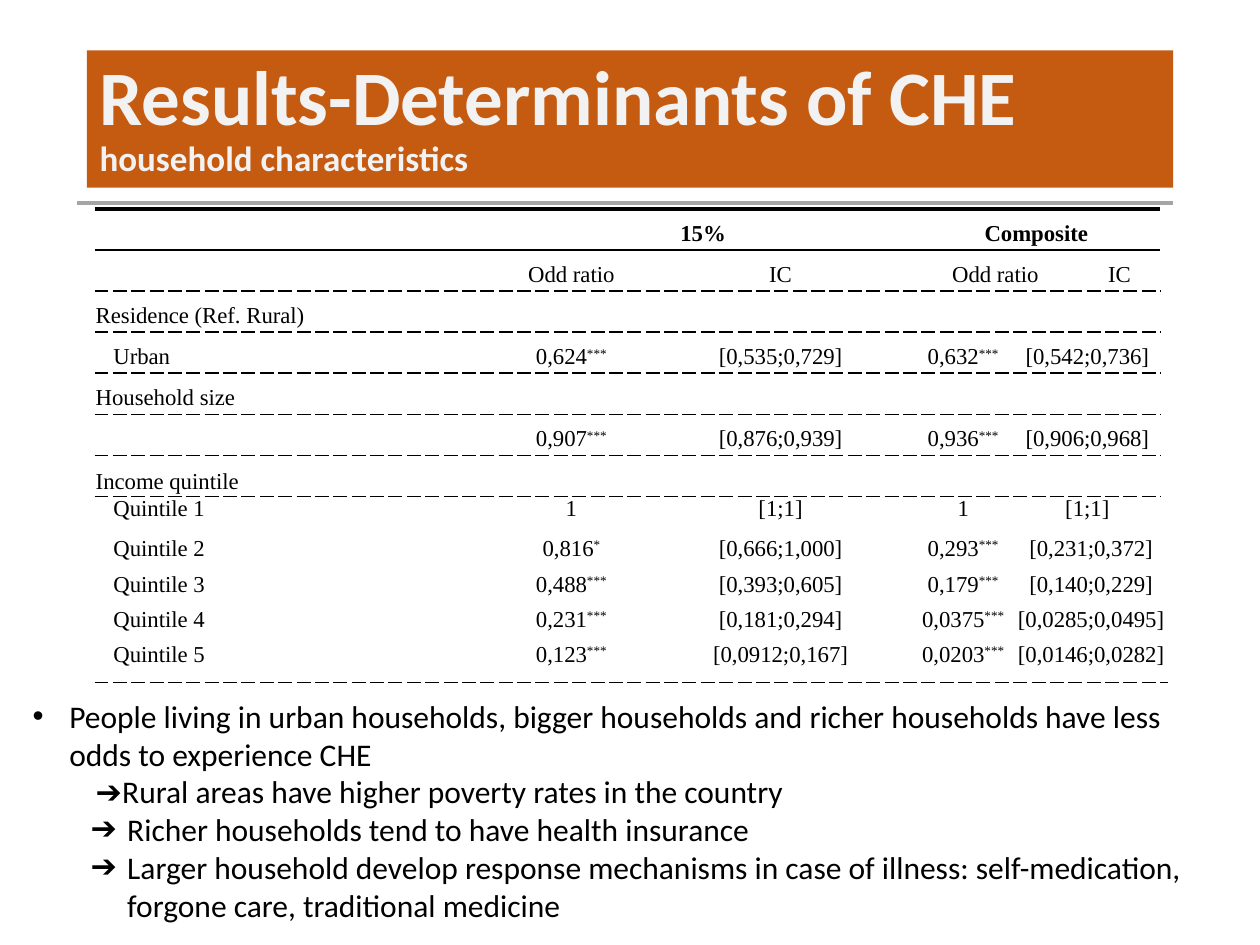
import pptx
import pptx.dml.color
import pptx.enum.dml
import pptx.enum.shapes
import pptx.enum.text
import pptx.oxml
import pptx.oxml.ns
import pptx.util
from pptx.util import Inches

COLORS = {"banner": "C55A11", "banner_text": "F2F2F2", "rule": "A5A5A5", "text": "000000"}
NO_GRID_STYLE = "{2D5ABB26-0587-4C30-8999-92F81FD0307C}"
ALIGN = pptx.enum.text.PP_ALIGN

COLUMN_WIDTHS = [3.17, 1.23, 2.09, 0.81, 0.51, 0.65, 0.05]
ROW_HEIGHTS = [0.28] * 6 + [0.32] * 2 + [0.28] * 3 + [0.32]

# Each row: label, 15% odds ratio, interval, composite odds ratio, interval, last column
ROWS = [
    ["", "15%", "", "Composite"],
    ["", "Odd ratio", "IC", "Odd ratio", "", "IC"],
    ["Residence (Ref. Rural)"],
    ["Urban", "0,624***", "[0,535;0,729]", "0,632***", "[0,542;0,736]"],
    ["Household size"],
    ["", "0,907***", "[0,876;0,939]", "0,936***", "[0,906;0,968]"],
    ["Income quintile"],
    ["Quintile 1", "1", "[1;1]", "1", "[1;1]"],
    ["Quintile 2", "0,816*", "[0,666;1,000]", "0,293***", "[0,231;0,372]"],
    ["Quintile 3", "0,488***", "[0,393;0,605]", "0,179***", "[0,140;0,229]"],
    ["Quintile 4", "0,231***", "[0,181;0,294]", "0,0375***", "[0,0285;0,0495]"],
    ["Quintile 5", "0,123***", "[0,0912;0,167]", "0,0203***", "[0,0146;0,0282]"],
]
# Merged cells: row -> (first column, last column)
SPANS = {0: [(1, 2), (3, 5)], 1: [(3, 4)], 2: [(0, 5)]}
SPANS.update({row: [(4, 5)] for row in range(3, 8)})
SPANS.update({row: [(4, 6)] for row in range(8, 12)})

# Text, level, left margin, first-line indent, bullet
FINDINGS = [
    ("People living in urban households, bigger households and richer households "
     "have less odds to experience CHE", 0, 0.29, -0.29, "•"),
    ("➔Rural areas have higher poverty rates in the country", 1, 0.5, 0, None),
    ("Richer households tend to have health insurance", 1, 0.75, -0.29, "➔"),
    ("Larger household develop response mechanisms in case of illness: "
     "self-medication, forgone care, traditional medicine", 1, 0.75, -0.29, "➔"),
]


def element(xml):
    namespace = pptx.oxml.ns.nsdecls("a")
    return pptx.oxml.parse_xml(xml.replace("/>", f" {namespace}/>", 1)
                               if xml.endswith("/>") and xml.count("<") == 1
                               else xml.replace(">", f" {namespace}>", 1))


class SlideBuilder:
    heading_font = "Calibri"
    table_font = "Times New Roman"
    table_size = 13

    def __init__(self, slide):
        self.slide = slide

    def color(self, name):
        return pptx.dml.color.RGBColor.from_string(COLORS[name])

    def style_run(self, run, font, size, color="text", bold=False):
        run.font.name = font
        run.font.size = pptx.util.Pt(size)
        run.font.bold = bold
        run.font.color.rgb = self.color(color)

    def place(self, shape, left, top, width, height):
        shape.left, shape.top = Inches(left), Inches(top)
        shape.width, shape.height = Inches(width), Inches(height)

    def rule(self, left, right, y):
        line = self.slide.shapes.add_connector(
            pptx.enum.shapes.MSO_CONNECTOR.STRAIGHT,
            Inches(left), Inches(y), Inches(right), Inches(y))
        line.line.color.rgb = self.color("rule")
        line.line.width = pptx.util.Pt(2.25)
        line._element.spPr.append(element("<a:effectLst/>"))

    def title(self, heading, subheading, box):
        shape = self.slide.shapes.title
        self.place(shape, *box)
        shape.fill.solid()
        shape.fill.fore_color.rgb = self.color("banner")
        frame = shape.text_frame
        frame.text = heading + "\v" + subheading
        frame.vertical_anchor = pptx.enum.text.MSO_ANCHOR.MIDDLE
        frame.auto_size = pptx.enum.text.MSO_AUTO_SIZE.NONE
        paragraph = frame.paragraphs[0]
        paragraph.alignment = ALIGN.LEFT
        paragraph.line_spacing = 0.9
        for run, size in zip(paragraph.runs, (44, 20)):
            self.style_run(run, self.heading_font, size, "banner_text", True)

    def bullets(self, items, box):
        shape = self.slide.placeholders[1]
        self.place(shape, *box)
        frame = shape.text_frame
        frame.text = "\n".join(item[0] for item in items)
        frame.auto_size = pptx.enum.text.MSO_AUTO_SIZE.SHAPE_TO_FIT_TEXT
        for paragraph, (_, level, margin, indent, bullet) in zip(frame.paragraphs, items):
            paragraph.level = level
            paragraph.space_before = pptx.util.Pt(0)
            properties = paragraph._p.get_or_add_pPr()
            properties.set("marL", str(Inches(margin)))
            properties.set("indent", str(Inches(indent)))
            properties.append(element(f'<a:buChar char="{bullet}"/>' if bullet else "<a:buNone/>"))
            self.style_run(paragraph.runs[0], self.heading_font, 18)

    def cell(self, cell, text, row, column):
        cell.fill.background()
        cell.margin_left = cell.margin_right = Inches(0.01)
        cell.margin_top = cell.margin_bottom = 0
        paragraph = cell.text_frame.paragraphs[0]
        if not text:
            # Keeps an empty cell from stretching its row
            paragraph._p.append(element(f'<a:endParaRPr sz="{self.table_size * 100}"/>'))
            return
        value = text.rstrip("*")
        paragraph.text = value
        paragraph.alignment = ALIGN.CENTER if column else ALIGN.JUSTIFY
        paragraph.line_spacing = 1.5 if row < 7 else 1.0
        if column == 0 and text.startswith(("Urban", "Quintile")):
            paragraph._p.get_or_add_pPr().set("marL", str(Inches(0.14)))
        if value != text:
            stars = paragraph.add_run()
            stars.text = text[len(value):]
            stars.font._element.set("baseline", "30000")
        for run in paragraph.runs:
            self.style_run(run, self.table_font, self.table_size, bold=row == 0)

    def border(self, cell, side, width, dash):
        properties = cell._tc.get_or_add_tcPr()
        line = element(
            f'<a:{side} w="{pptx.util.Pt(width)}"><a:solidFill><a:srgbClr val="{COLORS["text"]}"/>'
            f'</a:solidFill><a:prstDash val="{dash}"/></a:{side}>')
        has_top = properties.find(pptx.oxml.ns.qn("a:lnT")) is not None
        properties.insert(1 if side == "lnB" and has_top else 0, line)

    def row_border(self, table, row, side, width=1, dash="solid"):
        last_row = row == len(ROWS) - 1
        for column in range(len(COLUMN_WIDTHS) if last_row else len(COLUMN_WIDTHS) - 1):
            self.border(table.cell(row, column), side, width, dash)

    def table(self, left, top):
        frame = self.slide.shapes.add_table(
            len(ROWS), len(COLUMN_WIDTHS), Inches(left), Inches(top),
            Inches(sum(COLUMN_WIDTHS)), Inches(sum(ROW_HEIGHTS)))
        table = frame.table
        table.first_row = table.horz_banding = False
        table._tbl.tblPr.find(pptx.oxml.ns.qn("a:tableStyleId")).text = NO_GRID_STYLE
        for column, width in zip(table.columns, COLUMN_WIDTHS):
            column.width = Inches(width)
        for index, (texts, height) in enumerate(zip(ROWS, ROW_HEIGHTS)):
            table.rows[index].height = Inches(height)
            padded = texts + [""] * (len(COLUMN_WIDTHS) - len(texts))
            for column, text in enumerate(padded):
                self.cell(table.cell(index, column), text, index, column)
            for first, last in SPANS[index]:
                table.cell(index, first).merge(table.cell(index, last))
        table.cell(6, 0).vertical_anchor = pptx.enum.text.MSO_ANCHOR.MIDDLE
        # Lines between the groups of rows
        self.row_border(table, 0, "lnT", 2.25)
        for row, dash in ((0, "solid"), (1, "dash"), (3, "dash"), (5, "dash")):
            self.row_border(table, row, "lnB", dash=dash)
            self.row_border(table, row + 1, "lnT", dash=dash)
        self.row_border(table, len(ROWS) - 1, "lnB", dash="dash")


def main():
    presentation = pptx.Presentation()
    presentation.slide_width, presentation.slide_height = Inches(10), Inches(7.5)
    slide = presentation.slides.add_slide(presentation.slide_layouts[1])
    builder = SlideBuilder(slide)

    # Heading
    builder.title("Results-Determinants of CHE", "household characteristics",
                  (0.69, 0.4, 8.62, 1.09))
    builder.rule(0.61, 9.31, 1.61)

    # Odds ratios and findings
    builder.table(0.75, 1.66)
    builder.bullets(FINDINGS, (0.16, 5.48, 9.58, 1.92))

    presentation.save("out.pptx")


if __name__ == "__main__":
    main()
